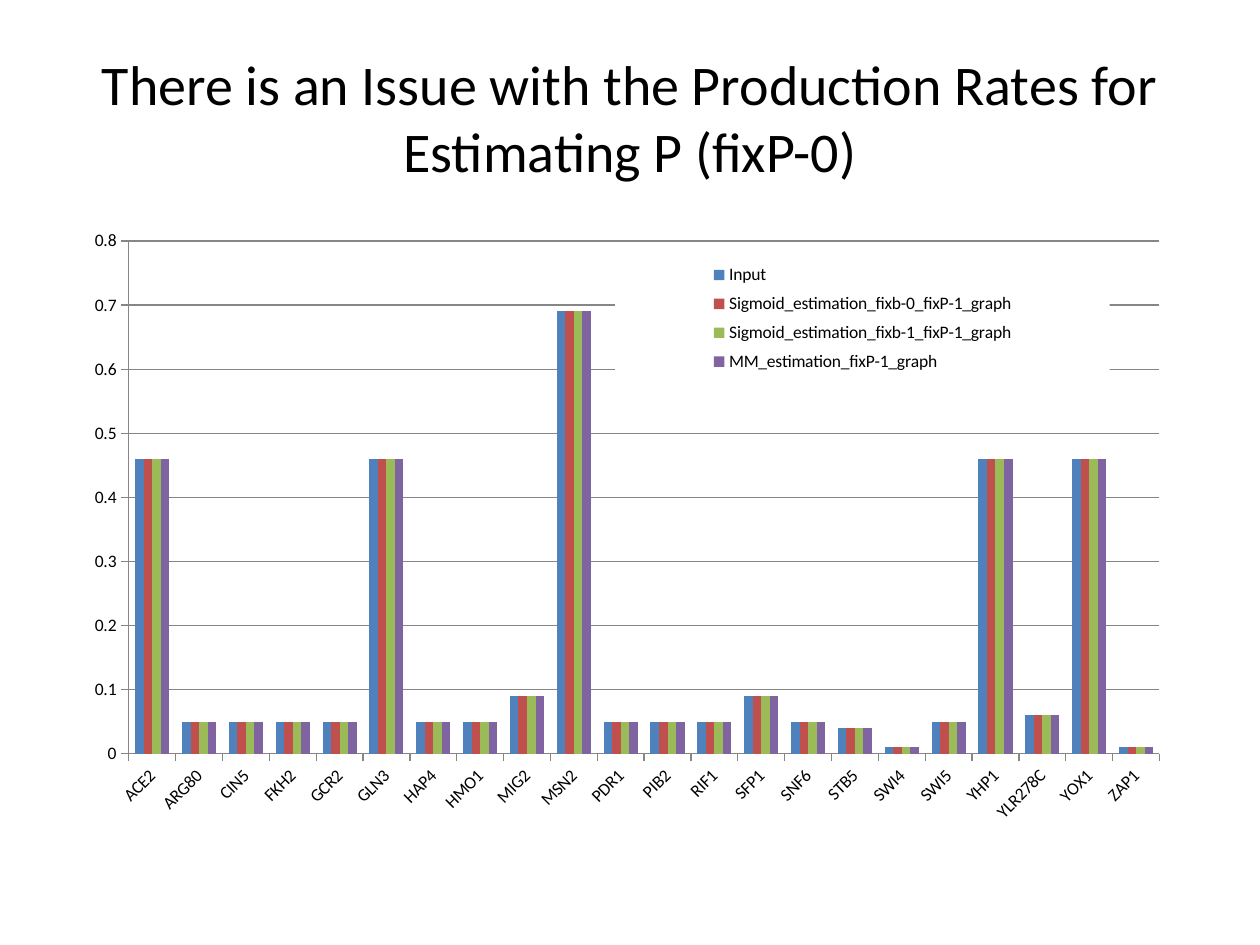
from lxml.etree import SubElement
from pptx import Presentation
from pptx.chart.data import CategoryChartData as Data
from pptx.dml.color import RGBColor
from pptx.enum.chart import XL_CHART_TYPE as Kind, XL_LEGEND_POSITION as Spot
from pptx.enum.chart import XL_TICK_MARK as Tick
from pptx.enum.text import MSO_ANCHOR as Anchor, PP_ALIGN as Align
from pptx.oxml import parse_xml
from pptx.oxml.ns import nsdecls, qn
from pptx.util import Inches, Pt

FONT = "Calibri"
BLACK = RGBColor(0x00, 0x00, 0x00)
GRAY = RGBColor(0x86, 0x86, 0x86)
SERIES = {
    "Input ": RGBColor(0x4F, 0x81, 0xBD),
    "Sigmoid_estimation_fixb-0_fixP-1_graph": RGBColor(0xC0, 0x50, 0x4D),
    "Sigmoid_estimation_fixb-1_fixP-1_graph": RGBColor(0x9B, 0xBB, 0x59),
    "MM_estimation_fixP-1_graph": RGBColor(0x80, 0x64, 0xA2),
}
# All four series share the same production rates.
RATES = {
    "ACE2": 0.46, "ARG80": 0.05, "CIN5": 0.05, "FKH2": 0.05, "GCR2": 0.05,
    "GLN3": 0.46, "HAP4": 0.05, "HMO1": 0.05, "MIG2": 0.09, "MSN2": 0.69,
    "PDR1": 0.05, "PIB2": 0.05, "RIF1": 0.05, "SFP1": 0.09, "SNF6": 0.05,
    "STB5": 0.04, "SWI4": 0.01, "SWI5": 0.05, "YHP1": 0.46, "YLR278C": 0.06,
    "YOX1": 0.46, "ZAP1": 0.01,
}


def layout(inner, *box):
    """Manual chart layout; box is left, top, width, height as shares."""
    node = parse_xml(f"<c:layout {nsdecls('c')}><c:manualLayout/></c:layout>")
    rules = [("layoutTarget", "inner")] if inner else []
    rules += [("xMode", "edge"), ("yMode", "edge"), *zip("xywh", box)]
    for tag, val in rules:
        SubElement(node[0], qn(f"c:{tag}"), val=str(val))
    return node


prs = Presentation()
prs.slide_width, prs.slide_height = Inches(10), Inches(7.5)
wide, high = prs.slide_width, prs.slide_height
slide = prs.slides.add_slide(prs.slide_layouts[6])
left, span = int(wide * 0.05), int(wide * 0.9)

# Title
title = slide.shapes.add_textbox(left, int(high * 0.04), span, Inches(1.25))
frame = title.text_frame
frame.word_wrap = True
frame.vertical_anchor = Anchor.MIDDLE
para = frame.paragraphs[0]
para.text = "There is an Issue with the Production Rates for Estimating P (fixP-0)"
para.alignment = Align.CENTER
para.font.name, para.font.size = FONT, Pt(32)
para.font.color.rgb = BLACK

# Chart
data = Data()
data.categories = list(RATES)
for name in SERIES:
    data.add_series(name, list(RATES.values()))
chart = slide.shapes.add_chart(
    Kind.COLUMN_CLUSTERED, left, Inches(1.75), span, int(high * 0.66), data
).chart
chart.has_title = False
chart.font.name, chart.font.size = FONT, Pt(10)
chart.font.color.rgb = BLACK

plot = chart.plots[0]
plot.gap_width, plot.overlap = 150, 0
plot.vary_by_categories = False
for bars, color in zip(plot.series, SERIES.values()):
    bars.format.fill.solid()
    bars.format.fill.fore_color.rgb = color

# Axes
cats, vals = chart.category_axis, chart.value_axis
vals.minimum_scale, vals.maximum_scale, vals.major_unit = 0, 0.8, 0.1
vals.has_major_gridlines = True
vals.tick_labels.number_format = "General"
vals.tick_labels.number_format_is_linked = False
for axis in (cats, vals):
    axis.major_tick_mark, axis.minor_tick_mark = Tick.OUTSIDE, Tick.NONE
    axis.tick_labels.font.size = Pt(10)
for part in (cats, vals, vals.major_gridlines):
    part.format.line.color.rgb = GRAY
    part.format.line.width = Pt(0.75)
slant = cats._element.find(qn("c:txPr")).find(qn("a:bodyPr"))
slant.set("rot", str(-45 * 60000))

# Plot area
area = chart._chartSpace.chart.plotArea
for old in area.findall(qn("c:layout")):
    area.remove(old)
area.insert(0, layout(True, 0.058, 0.033, 0.909, 0.822))

# Legend on a white panel over the gridlines
chart.has_legend = True
legend = chart.legend
legend.position = Spot.RIGHT
legend.include_in_layout = False
legend.font.size = Pt(10)
key = legend._element
for old in key.findall(qn("c:layout")):
    key.remove(old)
key.find(qn("c:legendPos")).addnext(layout(False, 0.487, 0.057, 0.436, 0.2))
key.find(qn("c:overlay")).addnext(parse_xml(
    f"<c:spPr {nsdecls('c', 'a')}><a:solidFill><a:srgbClr val='FFFFFF'/>"
    "</a:solidFill><a:ln><a:noFill/></a:ln></c:spPr>"))

prs.save("out.pptx")
